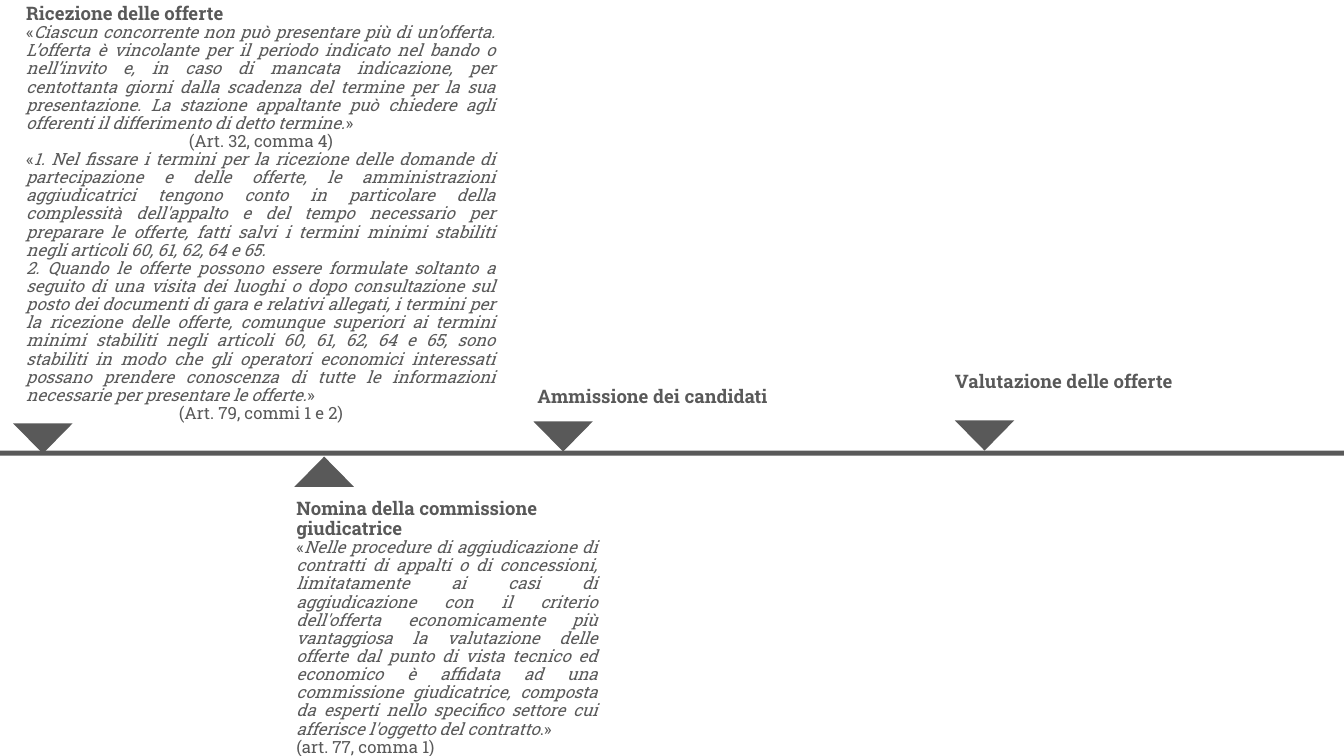
from pptx import Presentation
from pptx.dml.color import RGBColor
from pptx.enum.shapes import MSO_SHAPE
from pptx.enum.text import MSO_ANCHOR, PP_ALIGN
from pptx.util import Pt

PX = 9144  # 100 px to the inch
GREY = "595959"
FONT = "Roboto Slab"
LEFT, MID, JUST = PP_ALIGN.LEFT, PP_ALIGN.CENTER, PP_ALIGN.JUSTIFY


def paint(color, hue):
    color.rgb = RGBColor.from_string(hue)


def draw(kind, *box):
    shape = slide.shapes.add_shape(kind, *[n * PX for n in box])
    shape.shadow.inherit = False
    shape.fill.solid()
    paint(shape.fill.fore_color, GREY)
    shape.line.fill.background()
    return shape


deck = Presentation()
deck.slide_width, deck.slide_height = 1333 * PX, 750 * PX
slide = deck.slides.add_slide(deck.slide_layouts[6])

# Time line
draw(MSO_SHAPE.RECTANGLE, -9, 447, 1342, 5)

# Markers: left, top, turn
for left, top, turn in [(13, 420, 180), (292, 453, 0), (529, 418, 180), (947, 417, 180)]:
    mark = draw(MSO_SHAPE.ISOSCELES_TRIANGLE, left, top, 59, 30)
    mark.rotation = turn

# Stages: box, heading, body as (alignment, [(text, italic)])
stages = [
    ((13, -9, 492, 126), "Ricezione delle offerte", [
        (JUST, [
            ("«", False),
            ("Ciascun concorrente non può presentare più di un’offerta. L’offerta è "
             "vincolante per il periodo indicato nel bando o nell’invito e, in caso di "
             "mancata indicazione, per centottanta giorni dalla scadenza del termine per "
             "la sua presentazione. La stazione appaltante può chiedere agli offerenti il "
             "differimento di detto termine.", True),
            ("»", False)]),
        (MID, [("(Art. 32, comma 4)", False)]),
        (JUST, [
            ("«", False),
            ("1. Nel fissare i termini per la ricezione delle domande di partecipazione e "
             "delle offerte, le amministrazioni aggiudicatrici tengono conto in particolare "
             "della complessità dell'appalto e del tempo necessario per preparare le "
             "offerte, fatti salvi i termini minimi stabiliti negli articoli 60, 61, 62, "
             "64 e 65.", True)]),
        (JUST, [
            ("2. Quando le offerte possono essere formulate soltanto a seguito di una visita "
             "dei luoghi o dopo consultazione sul posto dei documenti di gara e relativi "
             "allegati, i termini per la ricezione delle offerte, comunque superiori ai "
             "termini minimi stabiliti negli articoli 60, 61, 62, 64 e 65, sono stabiliti "
             "in modo che gli operatori economici interessati possano prendere conoscenza "
             "di tutte le informazioni necessarie per presentare le offerte.", True),
            ("»", False)]),
        (MID, [("(Art. 79, commi 1 e 2)", False)]),
    ]),
    ((281, 482, 325, 199), "Nomina della commissione giudicatrice", [
        (JUST, [
            ("«", False),
            ("Nelle procedure di aggiudicazione di contratti di appalti o di concessioni, "
             "limitatamente ai casi di aggiudicazione con il criterio dell'offerta "
             "economicamente più vantaggiosa la valutazione delle offerte dal punto di "
             "vista tecnico ed economico è affidata ad una commissione giudicatrice, "
             "composta da esperti nello specifico settore cui afferisce l'oggetto del "
             "contratto", True),
            (".»", False)]),
        (JUST, [("(art. 77, comma 1)", False)]),
    ]),
    ((520, 374, 364, 43), "Ammissione dei candidati", []),
    ((934, 359, 355, 45), "Valutazione delle offerte", []),
]

for box, head, body in stages:
    frame = slide.shapes.add_textbox(*[n * PX for n in box]).text_frame
    frame.word_wrap = True
    frame.vertical_anchor = MSO_ANCHOR.TOP
    frame.margin_left = frame.margin_right = 13 * PX
    frame.margin_top = frame.margin_bottom = 13 * PX
    for i, (align, parts) in enumerate([(LEFT, [(head, False)])] + body):
        para = frame.add_paragraph() if i else frame.paragraphs[0]
        para.alignment = align
        para.line_spacing = 0.9
        for text, slant in parts:
            run = para.add_run()
            run.text = text
            run.font.name = FONT
            run.font.size = Pt(12 if i else 13.3)
            run.font.bold = i == 0
            run.font.italic = slant
            paint(run.font.color, GREY)

deck.save("out.pptx")
